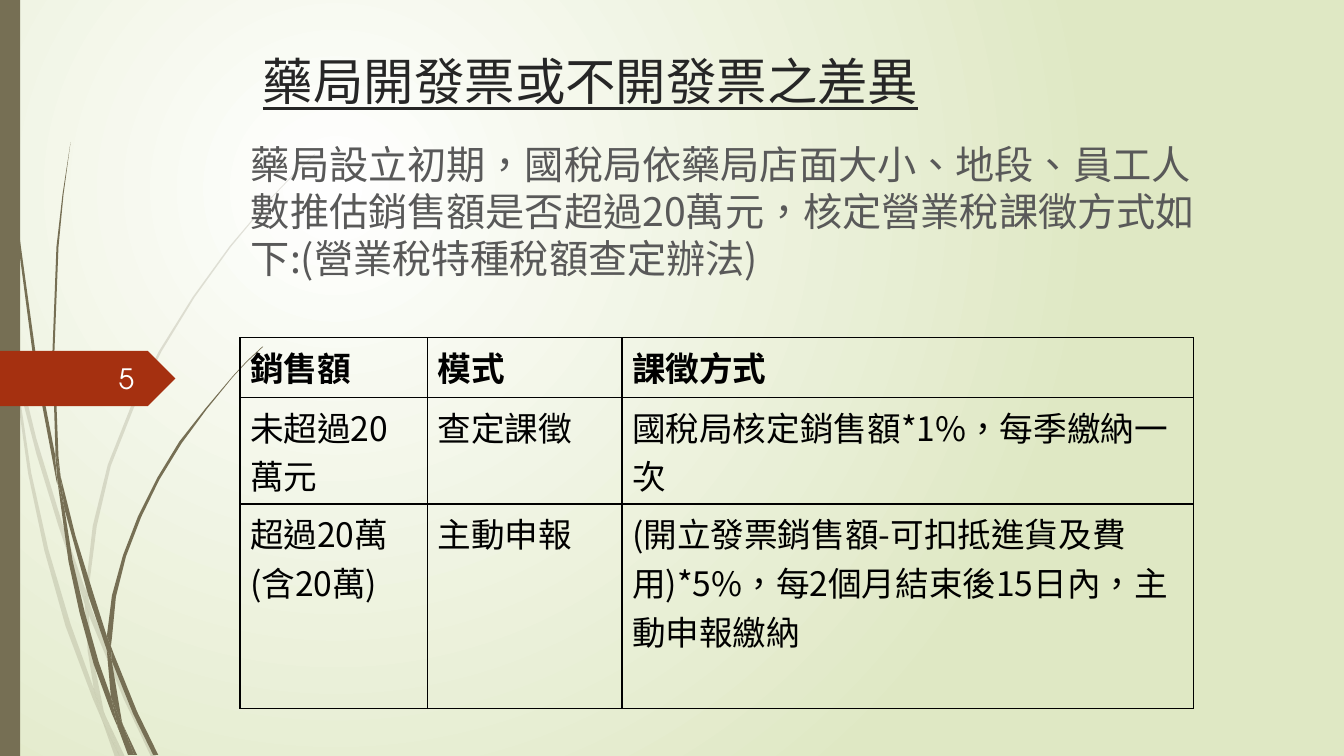
from lxml import etree
from pptx import Presentation
from pptx.dml.color import RGBColor
from pptx.enum.shapes import MSO_SHAPE
from pptx.enum.text import MSO_ANCHOR, PP_ALIGN
from pptx.oxml.ns import qn
from pptx.util import Inches, Pt

RECT, TAG = MSO_SHAPE.RECTANGLE, MSO_SHAPE.PENTAGON
TOP, MIDDLE = MSO_ANCHOR.TOP, MSO_ANCHOR.MIDDLE
LEFT, RIGHT = PP_ALIGN.LEFT, PP_ALIGN.RIGHT

# Content
TITLE = "藥局開發票或不開發票之差異"
INTRO = ("藥局設立初期，國稅局依藥局店面大小、地段、員工人數推估銷售額是否超過20萬元，"
         "核定營業稅課徵方式如下:(營業稅特種稅額查定辦法)")
PAGE = "5"
TAX_ROWS = [
    ("銷售額", "模式", "課徵方式"),
    ("未超過20萬元", "查定課徵", "國稅局核定銷售額*1%，每季繳納一次"),
    ("超過20萬(含20萬)", "主動申報",
     "(開立發票銷售額-可扣抵進貨及費用)*5%，每2個月結束後15日內，主動申報繳納"),
]
COLUMN_WIDTHS = [1.86, 1.93, 5.67]
ROW_HEIGHTS = [0.59, 1.06, 2.03]

COLORS = {"white": "FFFFFF", "green": "DFE8C4", "olive": "766F54", "red": "A53010",
          "title": "262626", "intro": "595959", "black": "000000", "page": "FEFFFF"}
CJK, LATIN = "Noto Sans CJK SC", "TeX Gyre Adventor"

# Grass blade pieces: corner points (x, y) in inches
PALE_GRASS = [
    [(0.11, 3.5), (0.09, 3.22), (0, 2.82), (0, 2.99), (0.1, 3.44)],
    [(0.58, 5.22), (0.84, 5.99), (0.85, 5.86), (0.62, 5.2), (0.36, 4.35), (0.14, 3.45),
     (0.17, 3.76), (0.36, 4.5)],
    [(0.92, 6.07), (0.88, 5.96), (0.88, 6.1), (1.23, 6.94), (1.5, 7.51), (1.55, 7.51),
     (1.27, 6.92)],
    [(1.19, 7.51), (1.24, 7.51), (1.05, 7.11)],
    [(0.93, 6.83), (0.7, 6.19), (0.48, 5.45), (0.31, 4.69), (0.17, 3.76), (0.11, 3.5),
     (0.28, 4.7), (0.44, 5.46), (0.65, 6.21), (0.92, 6.93), (1.01, 7.14), (0.99, 7.07)],
    [(0.84, 5.99), (0.87, 6.46), (0.93, 6.83), (0.96, 6.92), (1.05, 7.11), (1.03, 7.06),
     (0.91, 6.46), (0.88, 6.1), (0.88, 6.08)],
    [(0.88, 5.84), (0.96, 5.22), (1.1, 4.62), (1.33, 4.04), (1.6, 3.49), (1.93, 2.95),
     (2.29, 2.45), (2.68, 1.98), (2.9, 1.75), (3.12, 1.54), (3.12, 1.53), (2.89, 1.75),
     (2.68, 1.97), (2.28, 2.44), (1.91, 2.95), (1.58, 3.48), (1.3, 4.03), (1.07, 4.61),
     (0.92, 5.22), (0.85, 5.84), (0.85, 5.86), (0.88, 5.96)],
    [(1.01, 7.14), (1.14, 7.51), (1.19, 7.51)],
    [(0.88, 6.08), (0.88, 6.1), (0.88, 5.96), (0.85, 5.86), (0.84, 5.99)],
    [(0.96, 6.92), (0.93, 6.83), (0.99, 7.07), (1.01, 7.14), (1.19, 7.51), (1.05, 7.11)],
]
DARK_GRASS = [
    [(0.07, 1.1), (0.17, 2.33), (0.33, 3.55), (0.56, 4.77), (0.57, 4.81), (0.55, 4.57),
     (0.55, 4.53), (0.36, 3.55), (0.19, 2.32), (0.08, 1.09), (0.05, 0.48), (0.04, 0),
     (0.03, 0), (0.04, 0.48)],
    [(0.88, 5.92), (1.06, 6.45), (1.06, 6.33), (1.06, 6.31), (0.93, 5.9), (0.75, 5.32),
     (0.6, 4.72), (0.64, 5.05)],
    [(1.13, 6.49), (1.1, 6.41), (1.11, 6.56), (1.32, 7.08), (1.52, 7.49), (1.57, 7.49),
     (1.36, 7.06)],
    [(1.1, 6.91), (0.98, 6.57), (0.84, 6.07), (0.72, 5.56), (0.64, 5.05), (0.57, 4.77),
     (0.68, 5.57), (0.79, 6.08), (0.93, 6.59), (1.11, 7.08), (1.17, 7.22), (1.16, 7.17)],
    [(0.6, 4.72), (0.58, 4.53), (0.54, 3.49), (0.58, 2.45), (0.63, 1.93), (0.7, 1.41),
     (0.62, 1.93), (0.56, 2.45), (0.52, 3.49), (0.55, 4.49)],
    [(1.33, 7.49), (1.36, 7.49), (1.22, 7.19)],
    [(0.57, 4.77), (0.64, 5.05), (0.6, 4.72), (0.55, 4.49), (0.55, 4.53)],
    [(1.11, 6.33), (1.15, 5.92), (1.25, 5.52), (1.4, 5.13), (1.58, 4.76), (1.8, 4.4),
     (2.05, 4.06), (2.31, 3.74), (2.45, 3.59), (2.61, 3.44), (2.6, 3.44), (2.45, 3.58),
     (2.31, 3.73), (2.04, 4.05), (1.78, 4.38), (1.56, 4.74), (1.37, 5.12), (1.22, 5.51),
     (1.11, 5.91), (1.06, 6.31), (1.1, 6.41)],
    [(1.17, 7.22), (1.27, 7.49), (1.31, 7.49)],
    [(1.06, 6.45), (1.1, 6.91), (1.16, 7.06), (1.22, 7.19), (1.21, 7.16), (1.11, 6.56),
     (1.09, 6.51)],
    [(1.06, 6.45), (1.09, 6.51), (1.11, 6.56), (1.1, 6.41), (1.06, 6.31), (1.06, 6.33)],
    [(1.16, 7.06), (1.1, 6.91), (1.16, 7.17), (1.17, 7.22), (1.3, 7.49), (1.33, 7.49),
     (1.22, 7.19)],
]


def rgb(name):
    return RGBColor.from_string(COLORS[name])


def paint(shape, color, opacity=100):
    shape.shadow.inherit = False
    shape.fill.solid()
    shape.fill.fore_color.rgb = rgb(color)
    shape.line.fill.background()
    if opacity < 100:
        tint = shape._element.spPr.find(".//" + qn("a:srgbClr"))
        etree.SubElement(tint, qn("a:alpha"), val=str(opacity * 1000))


def add_grass(slide, outline, opacity):
    # The builder keeps whole units only, so work in hundredths of an inch
    start, *others = [(round(x * 100), round(y * 100)) for x, y in outline]
    builder = slide.shapes.build_freeform(*start, scale=Inches(0.01))
    builder.add_line_segments(others, close=True)
    paint(builder.convert_to_shape(), "olive", opacity)


def write(frame, text, size, color, font=CJK, bold=False, underline=False, align=LEFT):
    frame.word_wrap = True
    paragraph = frame.paragraphs[0]
    paragraph.alignment = align
    run = paragraph.add_run()
    run.text = text
    run.font.name, run.font.size = font, Pt(size)
    run.font.bold, run.font.underline = bold, underline
    run.font.color.rgb = rgb(color)
    props = run._r.get_or_add_rPr()
    props.set("lang", "zh-TW")
    props.find(qn("a:latin")).addnext(props.makeelement(qn("a:ea"), {"typeface": font}))


def add_text(slide, box, text, size, color, anchor=TOP, **style):
    frame = slide.shapes.add_textbox(*map(Inches, box)).text_frame
    frame.vertical_anchor = anchor
    write(frame, text, size, color, **style)


def add_borders(cell):
    props = cell._tc.get_or_add_tcPr()
    for index, side in enumerate(("lnL", "lnR", "lnT", "lnB")):
        line = props.makeelement(qn("a:" + side), {"w": str(Pt(1))})
        fill = etree.SubElement(line, qn("a:solidFill"))
        etree.SubElement(fill, qn("a:srgbClr"), val=COLORS["black"])
        props.insert(index, line)


def main():
    deck = Presentation()
    deck.slide_width, deck.slide_height = Inches(13.33), Inches(7.5)
    slide = deck.slides.add_slide(deck.slide_layouts[6])

    # Radial background
    backdrop = slide.background.fill
    backdrop.gradient()
    for stop, color in zip(backdrop.gradient_stops, ("white", "green")):
        stop.color.rgb = rgb(color)
    gradient = slide._element.find(".//" + qn("a:gradFill"))
    gradient.remove(gradient.find(qn("a:lin")))
    circle = gradient.makeelement(qn("a:path"), {"path": "circle"})
    gradient.find(qn("a:gsLst")).addnext(circle)
    etree.SubElement(circle, qn("a:fillToRect"), l="50000", t="50000", r="100000", b="100000")

    # Grass, side bar and page tag
    for pieces, opacity in ((PALE_GRASS, 20), (DARK_GRASS, 100)):
        for outline in pieces:
            add_grass(slide, outline, opacity)
    for kind, box, color in ((RECT, (0, 0, 0.2, 7.5), "olive"),
                             (TAG, (0, 3.48, 1.74, 0.55), "red")):
        paint(slide.shapes.add_shape(kind, *map(Inches, box)), color)

    # Heading and introduction
    add_text(slide, (2.51, 0.45, 9.75, 0.95), TITLE, 36, "title", underline=True)
    add_text(slide, (2.39, 1.34, 9.75, 5.41), INTRO, 28, "intro")

    # Tax table
    table = slide.shapes.add_table(
        len(ROW_HEIGHTS), len(COLUMN_WIDTHS), Inches(2.38), Inches(3.35),
        Inches(sum(COLUMN_WIDTHS)), Inches(sum(ROW_HEIGHTS))).table
    table.first_row = table.horz_banding = False
    for column, width in zip(table.columns, COLUMN_WIDTHS):
        column.width = Inches(width)
    for r, (height, texts) in enumerate(zip(ROW_HEIGHTS, TAX_ROWS)):
        table.rows[r].height = Inches(height)
        for c, text in enumerate(texts):
            cell = table.cell(r, c)
            cell.fill.background()
            add_borders(cell)
            write(cell.text_frame, text, 24, "black", bold=r == 0)

    # Page number
    add_text(slide, (0.58, 3.55, 0.85, 0.4), PAGE, 20, "page", anchor=MIDDLE,
             font=LATIN, align=RIGHT)
    deck.save("out.pptx")


if __name__ == "__main__":
    main()
